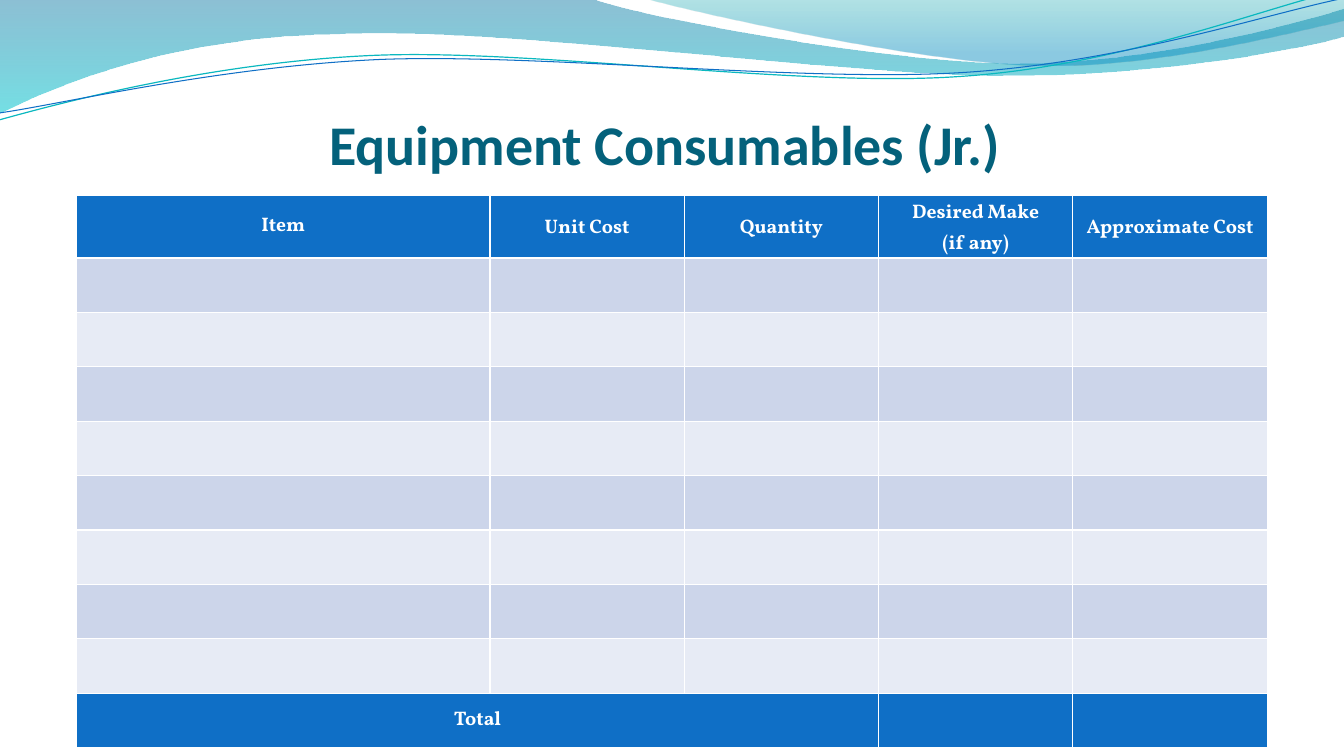
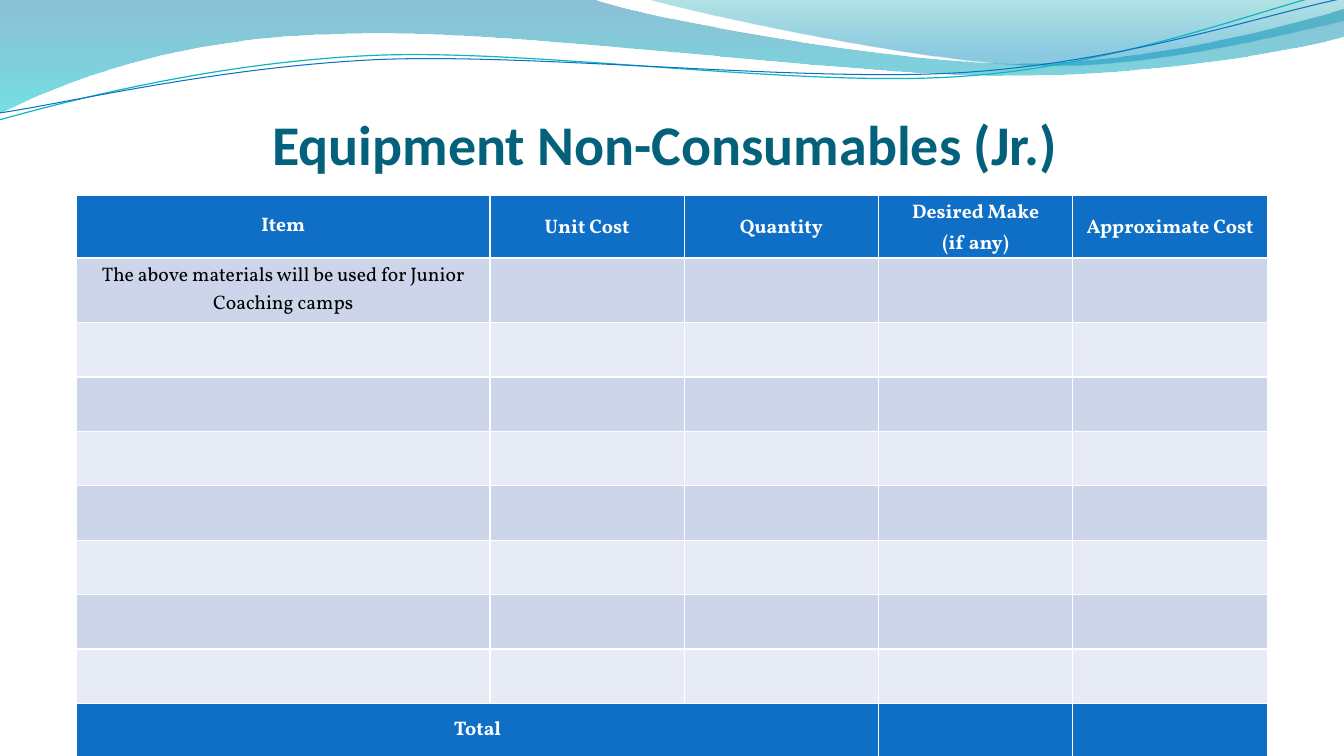
from copy import deepcopy
from dataclasses import dataclass

from lxml.etree import SubElement
from pptx import Presentation
from pptx.dml.color import RGBColor
from pptx.enum.text import MSO_ANCHOR, PP_ALIGN
from pptx.oxml import parse_xml
from pptx.oxml.ns import nsdecls, qn
from pptx.util import Inches, Pt

# Content
HEADINGS = ["Item", "Unit Cost", "Quantity", "Desired Make\n(if any)", "Approximate Cost"]
TOTAL_LABEL = "Total"
BODY_ROWS = 8
BUDGETS = [
    {"title": "Equipment Consumables (Jr.)", "items": []},
    {"title": "Equipment Non-Consumables (Jr.)",
     "items": ["The above materials will be used for Junior Coaching camps"]},
]


# Theme
@dataclass(frozen=True)
class Theme:
    accent: str = "0F6FC6"
    title: str = "04617B"
    white: str = "FFFFFF"
    text: str = "000000"
    bands: tuple = ("CCD5EA", "E7EBF5")
    teal: str = "0AB8BF"
    title_font: str = "Calibri"
    table_font: str = "Vollkorn"
    title_size: int = 40
    table_size: int = 14


THEME = Theme()

# Header waves in inches: a pair is a straight step, six numbers are a Bézier step
WAVE_BANDS = [
    {"start": (0, 0),
     "steps": [(5.87, -0.01), (6.34, 0.17, 8.85, 0.63, 10.11, 0.63),
               (11.38, 0.63, 12.78, 0.26, 13.33, 0.09), (13.35, 0.36),
               (13.11, 0.44, 11.6, 0.76, 9.94, 0.75),
               (8.29, 0.75, 5.09, 0.28, 3.43, 0.34),
               (1.72, 0.36, 0.61, 0.83, -0.01, 1.13), (0, 0)],
     "stops": [(0, "0074A1", 45), (1, "00C6CF", 55)]},
    {"start": (6.39, -0.01),
     "steps": [(6.79, 0.11, 9.09, 0.62, 10.25, 0.65),
               (11.41, 0.69, 12.82, 0.32, 13.33, 0.21), (13.33, 0), (6.39, -0.01)],
     "stops": [(0, "00A1A9", 30), (0.8, "008BBF", 45)]},
]
WAVE_LINES = [
    {"start": (-0.01, 1.19),
     "steps": [(0.64, 1.01, 2.11, 0.62, 3.69, 0.55),
               (5.27, 0.48, 7.9, 0.87, 9.5, 0.76),
               (11.1, 0.66, 12.52, 0.08, 13.31, -0.1)],
     "color": THEME.teal, "width": 0.85},
    {"start": (0, 1.12),
     "steps": [(0.63, 1.03, 2.18, 0.66, 3.78, 0.59),
               (5.37, 0.53, 7.96, 0.82, 9.55, 0.72),
               (11.15, 0.62, 12.55, 0.14, 13.34, -0.02)],
     "color": THEME.accent, "width": 0.75},
]

# Table grid in inches
TABLE_LEFT, TABLE_TOP, TABLE_WIDTH = 0.76, 1.94, 11.81
ITEM_WIDTH = 4.1
HEADING_HEIGHT, ITEM_HEIGHT, ROW_HEIGHT = 0.62, 0.64, 0.54
TOTAL_SPAN = 3


def rgb(color):
    return RGBColor.from_string(color)


def add_wave(slide, wave, closed):
    """Join the step ends, then bend the curved steps into Béziers."""
    builder = slide.shapes.build_freeform(*map(Inches, wave["start"]))
    builder.add_line_segments([tuple(map(Inches, step[-2:])) for step in wave["steps"]],
                              close=closed)
    shape = builder.convert_to_shape()
    shape.shadow.inherit = False
    segments = list(shape._element.iter(qn("a:lnTo")))
    for segment, step in zip(segments, wave["steps"]):
        if len(step) == 2:
            continue
        curve = SubElement(segment.getparent(), qn("a:cubicBezTo"))
        for x, y in zip(step[::2], step[1::2]):
            point = SubElement(curve, qn("a:pt"))
            point.set("x", str(Inches(x) - shape.left))
            point.set("y", str(Inches(y) - shape.top))
        segment.getparent().replace(segment, curve)
    return shape


def add_header(slide):
    """Draw the waves and hand them to the layout that all slides share."""
    waves = []
    for band in WAVE_BANDS:
        shape = add_wave(slide, band, closed=True)
        shape.line.fill.background()
        shape.fill.gradient()
        shape.fill.gradient_angle = 270
        for stop, (position, color, _) in zip(shape.fill.gradient_stops, band["stops"]):
            stop.position = position
            stop.color.rgb = rgb(color)
        colors = shape._element.spPr.iter(qn("a:srgbClr"))
        for color, (_, _, opacity) in zip(colors, band["stops"]):
            SubElement(color, qn("a:alpha")).set("val", str(opacity * 1000))
        waves.append(shape)
    for line in WAVE_LINES:
        shape = add_wave(slide, line, closed=False)
        shape.fill.background()
        shape.line.color.rgb = rgb(line["color"])
        shape.line.width = Pt(line["width"])
        waves.append(shape)
    for shape in waves:
        slide.slide_layout.shapes._spTree.append(shape._element)


def style_runs(paragraph, font_name, size, color, bold):
    paragraph.alignment = PP_ALIGN.CENTER
    for run in paragraph.runs:
        font = run.font
        font.name, font.size, font.bold = font_name, Pt(size), bold
        font.color.rgb = rgb(color)
    # Line breaks take the run format, so they do not stretch the line
    for line_break in paragraph._p.findall(qn("a:br")):
        line_break.insert(0, deepcopy(paragraph.runs[0]._r.rPr))


def add_title(slide, title):
    box = slide.shapes.add_textbox(Inches(0.69), Inches(0.77), Inches(11.81), Inches(0.98))
    frame = box.text_frame
    frame.word_wrap = True
    frame.vertical_anchor = MSO_ANCHOR.BOTTOM
    frame.margin_left = frame.margin_right = frame.margin_bottom = 0
    frame.text = title
    style_runs(frame.paragraphs[0], THEME.title_font, THEME.title_size, THEME.title, True)


def fill_cell(cell, color):
    cell.fill.solid()
    cell.fill.fore_color.rgb = rgb(color)
    properties = cell._tc.get_or_add_tcPr()
    for index, side in enumerate("LRTB"):
        properties.insert(index, parse_xml(
            f'<a:ln{side} {nsdecls("a")} w="{Pt(1)}"><a:solidFill>'
            f'<a:srgbClr val="{THEME.white}"/></a:solidFill></a:ln{side}>'))


def write_cell(cell, text, color=THEME.white, bold=True):
    cell.vertical_anchor = MSO_ANCHOR.MIDDLE
    paragraph = cell.text_frame.paragraphs[0]
    paragraph.text = text
    style_runs(paragraph, THEME.table_font, THEME.table_size, color, bold)
    return paragraph


def add_budget_table(slide, items):
    plain_rows = BODY_ROWS - len(items) + 1
    heights = [HEADING_HEIGHT] + [ITEM_HEIGHT] * len(items) + [ROW_HEIGHT] * plain_rows
    other_width = (TABLE_WIDTH - ITEM_WIDTH) / (len(HEADINGS) - 1)
    widths = [ITEM_WIDTH] + [other_width] * (len(HEADINGS) - 1)
    table = slide.shapes.add_table(
        len(heights), len(widths), Inches(TABLE_LEFT), Inches(TABLE_TOP),
        Inches(TABLE_WIDTH), Inches(sum(heights))).table
    for column, width in zip(table.columns, widths):
        column.width = Inches(width)
    for row_index, (row, height) in enumerate(zip(table.rows, heights)):
        row.height = Inches(height)
        is_body = 0 < row_index <= BODY_ROWS
        for cell in row.cells:
            fill_cell(cell, THEME.bands[(row_index - 1) % 2] if is_body else THEME.accent)

    # Headings
    for column_index, heading in enumerate(HEADINGS):
        cell = table.cell(0, column_index)
        paragraph = write_cell(cell, heading)
        if column_index:
            cell.margin_left = cell.margin_right = Inches(0.07)
            cell.margin_top = cell.margin_bottom = 0
            paragraph.line_spacing = 1.15
            paragraph.space_before, paragraph.space_after = Pt(5), Pt(10)

    # Items and total
    for row_index, item in enumerate(items, start=1):
        write_cell(table.cell(row_index, 0), item, THEME.text, False)
    total_row = len(heights) - 1
    total = table.cell(total_row, 0)
    total.merge(table.cell(total_row, TOTAL_SPAN - 1))
    write_cell(total, TOTAL_LABEL)


def main():
    deck = Presentation()
    deck.slide_width, deck.slide_height = Inches(13.33), Inches(7.5)
    blank = deck.slide_layouts[6]
    slides = [deck.slides.add_slide(blank) for _ in BUDGETS]
    add_header(slides[0])
    for slide, budget in zip(slides, BUDGETS):
        add_title(slide, budget["title"])
        add_budget_table(slide, budget["items"])
    deck.save("out.pptx")


if __name__ == "__main__":
    main()
